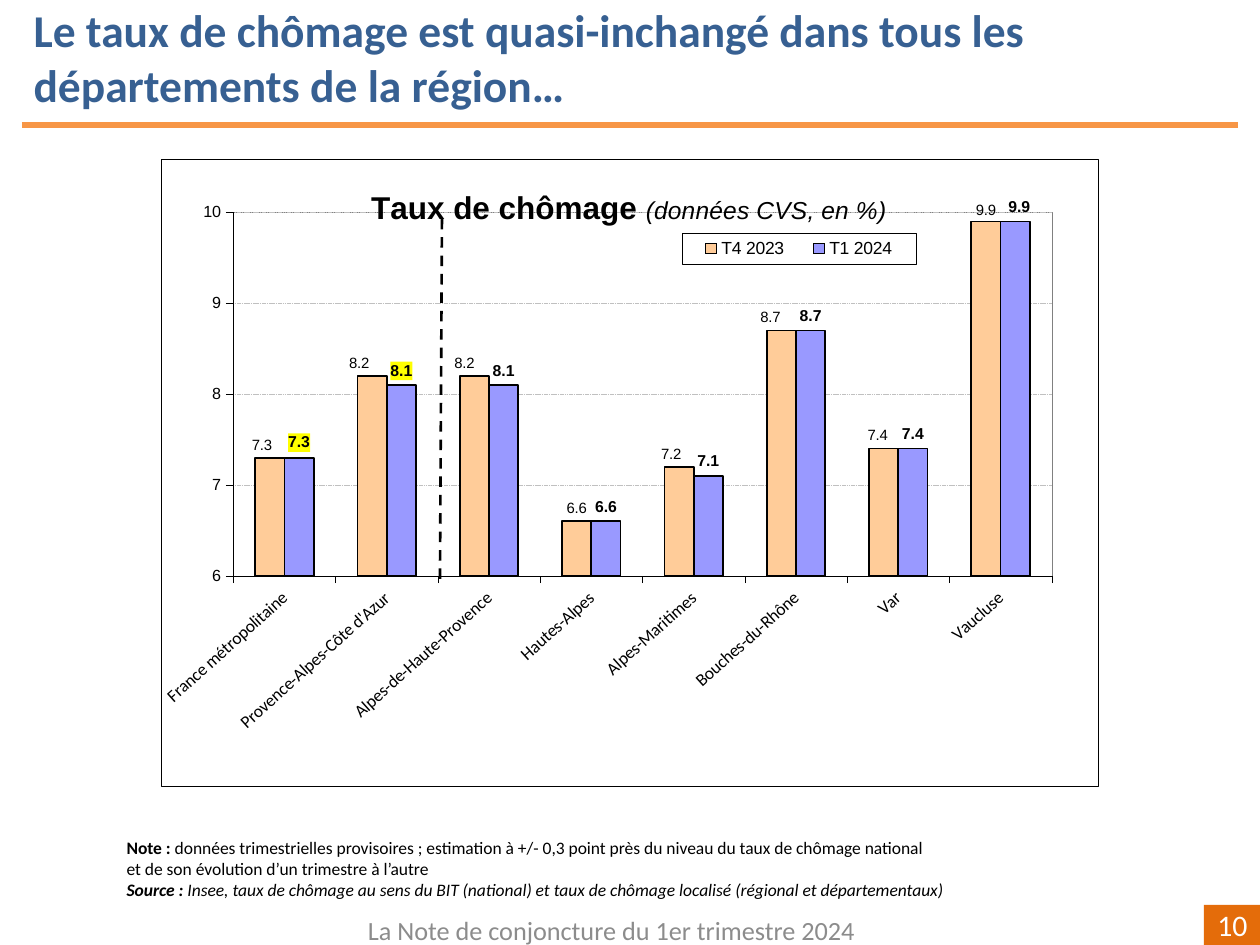
from pptx import Presentation
from pptx.chart.data import CategoryChartData
from pptx.dml.color import RGBColor
from pptx.enum.chart import XL_CHART_TYPE, XL_LABEL_POSITION, XL_LEGEND_POSITION, XL_TICK_MARK
from pptx.enum.dml import MSO_LINE
from pptx.enum.shapes import MSO_CONNECTOR, MSO_SHAPE
from pptx.enum.text import MSO_ANCHOR, MSO_AUTO_SIZE, PP_ALIGN
from pptx.oxml import parse_xml
from pptx.oxml.ns import nsdecls, qn
from pptx.util import Emu, Inches, Pt

BLACK = RGBColor(0x00, 0x00, 0x00)
WHITE = RGBColor(0xFF, 0xFF, 0xFF)
BLUE = RGBColor(0x37, 0x60, 0x92)
ORANGE = RGBColor(0xF7, 0x96, 0x46)
DARK_ORANGE = RGBColor(0xE4, 0x6C, 0x0A)
GREY = RGBColor(0x8C, 0x8C, 0x8C)
PLOT_BORDER = RGBColor(0x80, 0x80, 0x80)
GRID = RGBColor(0xC0, 0xC0, 0xC0)
PEACH = RGBColor(0xFF, 0xCC, 0x99)
LILAC = RGBColor(0x99, 0x99, 0xFF)
YELLOW = RGBColor(0xFF, 0xFF, 0x00)

PX = 914400 / 126
CHART_BOX = (161, 159, 937, 627)

RATES = {
    "France métropolitaine": (7.3, 7.3),
    "Provence-Alpes-Côte d'Azur": (8.2, 8.1),
    "Alpes-de-Haute-Provence": (8.2, 8.1),
    "Hautes-Alpes": (6.6, 6.6),
    "Alpes-Maritimes": (7.2, 7.1),
    "Bouches-du-Rhône": (8.7, 8.7),
    "Var": (7.4, 7.4),
    "Vaucluse": (9.9, 9.9),
}
# Label offsets in px, by point
T4_SHIFTS = {0: (-8, 0), 1: (-13, 0), 2: (-10, 0), 4: (-8, 0), 5: (-11, 0), 6: (-6, -1), 7: (0, 2)}
T1_SHIFTS = {0: (0, -1), 1: (0, 0), 7: (4, 0)}


def px(n):
    return Emu(round(n * PX))


def style_font(font, size, color=BLACK, name="Calibri", bold=False, italic=False):
    font.size, font.name, font.bold, font.italic = Pt(size), name, bold, italic
    font.color.rgb = color


def style_line(line, color, width, dash=None):
    line.color.rgb = color
    line.width = Pt(width)
    if dash:
        line.dash_style = dash


def sp_pr(fill=None, border=None):
    """Chart-part formatting with an optional fill and hairline border."""
    body = f'<a:solidFill><a:srgbClr val="{fill}"/></a:solidFill>' if fill else "<a:noFill/>"
    if border:
        body += f'<a:ln w="3175"><a:solidFill><a:srgbClr val="{border}"/></a:solidFill></a:ln>'
    return parse_xml(f'<c:spPr {nsdecls("c", "a")}>{body}</c:spPr>')


def set_layout(parent, index, **values):
    """Replace the manual layout of a chart part; index is its place among the children."""
    for old in parent.findall(qn("c:layout")):
        parent.remove(old)
    items = "".join(f'<c:{k} val="{v}"/>' for k, v in values.items())
    parent.insert(index, parse_xml(
        f'<c:layout {nsdecls("c")}><c:manualLayout>{items}</c:manualLayout></c:layout>'))


class Deck:
    """Holds the style and the current slide."""

    def __init__(self, prs):
        self.slide = prs.slides.add_slide(prs.slide_layouts[5])

    def title(self, box, text):
        sp = self.slide.shapes.title
        sp.left, sp.top, sp.width, sp.height = map(px, box)
        tf = sp.text_frame
        tf.text = text
        tf.word_wrap, tf.auto_size, tf.vertical_anchor = True, MSO_AUTO_SIZE.NONE, MSO_ANCHOR.TOP
        p = tf.paragraphs[0]
        p.alignment = PP_ALIGN.LEFT
        style_font(p.font, 26, BLUE, bold=True)

    def line(self, start, end, color, width, dash=None):
        cn = self.slide.shapes.add_connector(MSO_CONNECTOR.STRAIGHT, *map(px, start + end))
        style_line(cn.line, color, width, dash)
        cn._element.spPr.append(parse_xml(f'<a:effectLst {nsdecls("a")}/>'))

    def label(self, box, text, size, color, align, fill=None):
        sp = self.slide.shapes.add_shape(MSO_SHAPE.RECTANGLE, *map(px, box)) if fill \
            else self.slide.shapes.add_textbox(*map(px, box))
        if fill:
            sp.shadow.inherit = False
            sp.fill.solid()
            sp.fill.fore_color.rgb = fill
            sp.line.fill.background()
        tf = sp.text_frame
        tf.text = text
        tf.word_wrap, tf.vertical_anchor = True, MSO_ANCHOR.MIDDLE
        p = tf.paragraphs[0]
        p.alignment = align
        style_font(p.font, size, color)

    def footnote(self, box, paragraphs):
        """Each paragraph is (bold lead, body, italic)."""
        tf = self.slide.shapes.add_textbox(*map(px, box)).text_frame
        tf.word_wrap = True
        tf.margin_left, tf.margin_top = Inches(0.02), Inches(0.03)
        tf.margin_right = tf.margin_bottom = 0
        for i, (lead, body, italic) in enumerate(paragraphs):
            p = tf.paragraphs[0] if i == 0 else tf.add_paragraph()
            style_font(p.font, 10, italic=italic)
            for text, bold in ((lead, True), (body, False)):
                if text:
                    r = p.add_run()
                    r.text = text
                    style_font(r.font, 10, bold=bold, italic=italic)

    def column_chart(self, box, rates):
        data = CategoryChartData(number_format="0.0")
        data.categories = list(rates)
        for name, values in zip(("T4 2023", "T1 2024"), zip(*rates.values())):
            data.add_series(name, values)
        chart = self.slide.shapes.add_chart(
            XL_CHART_TYPE.COLUMN_CLUSTERED, *map(px, box), data).chart
        style_font(chart.font, 8.5, name="Arial")
        space = chart._chartSpace
        space.find(qn("c:chart")).addnext(sp_pr(WHITE, BLACK))
        plot_area = space.xpath("c:chart/c:plotArea")[0]
        set_layout(plot_area, 0, layoutTarget="inner", xMode="edge", yMode="edge",
                   x=0.077, y=0.085, w=0.874, h=0.58)
        plot_area.append(sp_pr(WHITE, PLOT_BORDER))
        plot = chart.plots[0]
        plot.gap_width, plot.overlap, plot.vary_by_categories = 150, 0, False
        return chart

    def chart_title(self, chart, main, detail):
        title = chart.chart_title
        p = title.text_frame.paragraphs[0]
        for text, size, bold in ((main, 18, True), (detail, 14, False)):
            r = p.add_run()
            r.text = text
            style_font(r.font, size, name="Arial", bold=bold, italic=not bold)
        set_layout(title._element, 1, xMode="edge", yMode="edge", x=0.22, y=0.04)
        title._element.find(qn("c:overlay")).set("val", "1")

    def chart_axes(self, chart):
        cat, val = chart.category_axis, chart.value_axis
        for axis, size, name in ((cat, 10, "Calibri"), (val, 9.2, "Arial")):
            axis.major_tick_mark = XL_TICK_MARK.OUTSIDE
            style_font(axis.tick_labels.font, size, name=name)
            style_line(axis.format.line, BLACK, 0.25)
        cat._element.find(qn("c:txPr")).find(qn("a:bodyPr")).set("rot", str(-42 * 60000))
        val.minimum_scale, val.maximum_scale, val.major_unit = 6, 10, 1
        val.tick_labels.number_format = "0"
        val.tick_labels.number_format_is_linked = False
        style_line(val.major_gridlines.format.line, GRID, 0.25, MSO_LINE.SQUARE_DOT)

    def chart_legend(self, chart):
        chart.has_legend = True
        legend = chart.legend
        legend.position = XL_LEGEND_POSITION.RIGHT
        legend.include_in_layout = False
        style_font(legend.font, 10, name="Arial")
        set_layout(legend._element, 1, xMode="edge", yMode="edge", x=0.556, y=0.118, w=0.25, h=0.05)
        legend._element.find(qn("c:overlay")).addnext(sp_pr(WHITE, BLACK))

    def chart_series(self, chart, index, color, size, bold, shifts, highlighted=()):
        series = chart.series[index]
        series.format.fill.solid()
        series.format.fill.fore_color.rgb = color
        style_line(series.format.line, BLACK, 1)
        labels = series.data_labels
        labels.show_value = True
        labels.number_format, labels.number_format_is_linked = "0.0", False
        labels.position = XL_LABEL_POSITION.OUTSIDE_END
        style_font(labels.font, size, name="Arial", bold=bold)
        for i, (dx, dy) in shifts.items():
            label = series.points[i].data_label
            style_font(label.font, size, name="Arial", bold=bold)
            label.position = XL_LABEL_POSITION.OUTSIDE_END
            d_lbl = series._element.xpath(f'c:dLbls/c:dLbl[c:idx/@val="{i}"]')[0]
            if i in highlighted:
                for old in d_lbl.findall(qn("c:spPr")):
                    d_lbl.remove(old)
                d_lbl.find(qn("c:txPr")).addprevious(sp_pr(YELLOW))
            set_layout(d_lbl, 1, x=round(dx / CHART_BOX[2], 4), y=round(dy / CHART_BOX[3], 4))


def main():
    prs = Presentation()
    prs.slide_width, prs.slide_height = Inches(10), Inches(7.5)
    deck = Deck(prs)
    deck.title((21, -4, 1225, 123),
               "Le taux de chômage est quasi-inchangé dans tous les départements de la région…")
    deck.line((22, 125), (1238, 125), ORANGE, 3)
    deck.label((1204, 905, 56, 40), "10", 17, WHITE, PP_ALIGN.RIGHT, DARK_ORANGE)
    deck.label((304, 905, 615, 50), "La Note de conjoncture du 1er trimestre 2024",
               15, GREY, PP_ALIGN.CENTER)
    deck.footnote((124, 833, 861, 67), [
        ("Note : ", "données trimestrielles provisoires ; estimation à +/- 0,3 point près "
                    "du niveau du taux de chômage national", False),
        ("", "et de son évolution d’un trimestre à l’autre", False),
        ("Source : ", "Insee, taux de chômage au sens du BIT (national) et taux de chômage "
                      "localisé (régional et départementaux)", True),
    ])
    chart = deck.column_chart(CHART_BOX, RATES)
    deck.chart_title(chart, "Taux de chômage ", "(données CVS, en %)")
    deck.chart_axes(chart)
    deck.chart_legend(chart)
    deck.chart_series(chart, 0, PEACH, 8.5, False, T4_SHIFTS)
    deck.chart_series(chart, 1, LILAC, 9, True, T1_SHIFTS, highlighted=(0, 1))
    deck.line((440, 579), (442, 214), BLACK, 1.5, MSO_LINE.DASH)
    prs.save("out.pptx")


if __name__ == "__main__":
    main()
